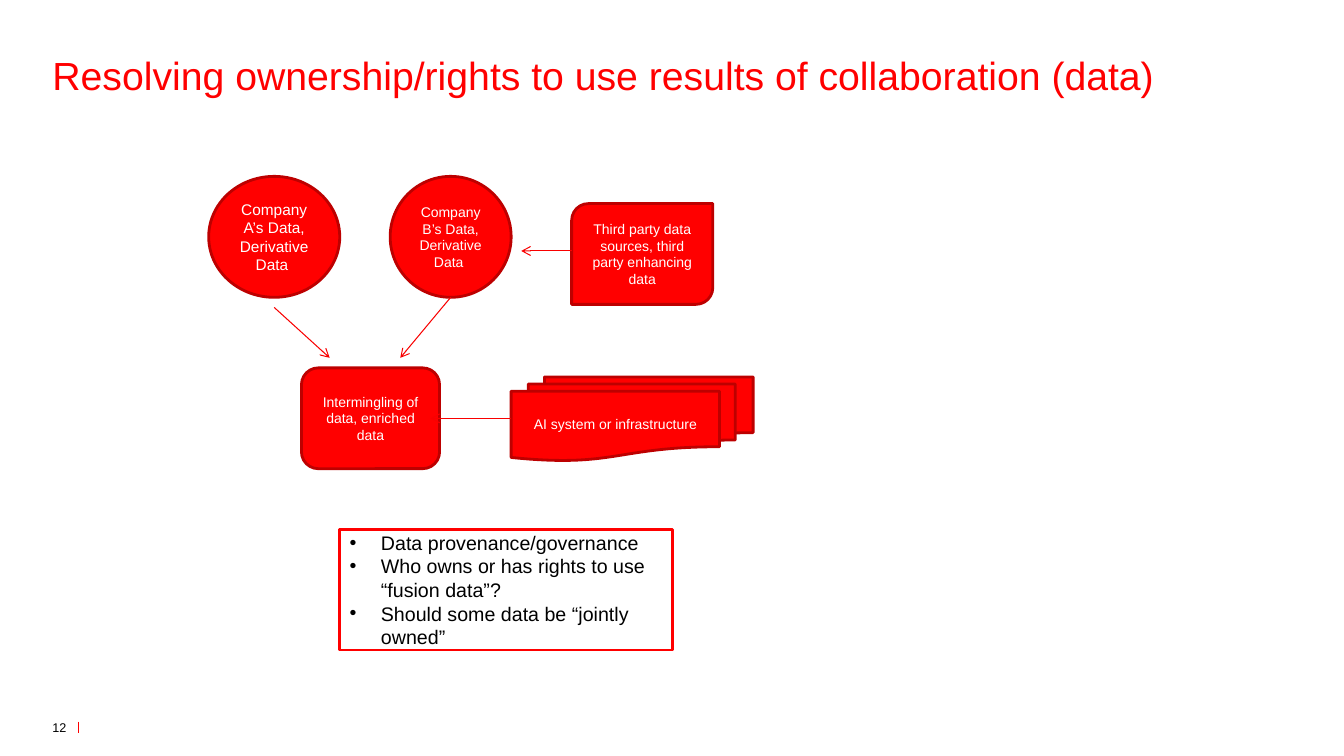
from lxml.etree import SubElement
from pptx import Presentation
from pptx.dml.color import RGBColor
from pptx.enum.shapes import MSO_CONNECTOR, MSO_SHAPE
from pptx.enum.text import MSO_ANCHOR, PP_ALIGN
from pptx.oxml.ns import qn
from pptx.util import Pt

PX = 9144
RED, DARK, ROSE, WHITE, BLACK = "FF0000", "BD0000", "F90000", "FFFFFF", "000000"
FLAT = dict(margin_left=0, margin_right=0, margin_top=0, margin_bottom=0)


def hue(code):
    """Turn a hex string into a colour."""
    return RGBColor.from_string(code)


def px(*nums):
    """Turn px lengths into EMU."""
    return [num * PX for num in nums]


def put(item, values):
    """Set each attribute named in a dict."""
    for name, value in values.items():
        setattr(item, name, value)


def write(shape, lines, size, color, align=PP_ALIGN.LEFT, bullet=None, **frame):
    """Fill a shape with paragraphs in one format."""
    text = shape.text_frame
    put(text, dict(word_wrap=True, vertical_anchor=MSO_ANCHOR.MIDDLE) | frame)
    text.text = "\n".join(lines)
    for para in text.paragraphs:
        para.alignment = align
        if bullet:
            props = para._p.get_or_add_pPr()
            put_xml = dict(marL=31 * PX, indent=-31 * PX)
            for name, value in put_xml.items():
                props.set(name, str(value))
            SubElement(props, qn("a:buFont"), typeface="Arial")
            SubElement(props, qn("a:buChar"), char=bullet)
        font = para.runs[0].font
        put(font, dict(name="Arial", size=Pt(size)))
        font.color.rgb = hue(color)


def block(slide, kind, box, fill, edge):
    """Draw a filled and outlined shape."""
    shape = slide.shapes.add_shape(kind, *px(*box))
    shape.shadow.inherit = False
    shape.fill.solid()
    shape.fill.fore_color.rgb = hue(fill)
    shape.line.color.rgb = hue(edge)
    shape.line.width = Pt(2)
    return shape


def link(slide, ends, color, width, head=True):
    """Draw a straight line, with an arrowhead if asked."""
    line = slide.shapes.add_connector(MSO_CONNECTOR.STRAIGHT, *px(*ends))
    line.line.color.rgb = hue(color)
    line.line.width = Pt(width)
    if head:
        SubElement(line.line._get_or_add_ln(), qn("a:tailEnd"), type="arrow")
    SubElement(line._element.spPr, qn("a:effectLst"))


def title(slide, box, words):
    """Place the heading."""
    write(slide.shapes.add_textbox(*px(*box)), [words], 28, RED, **FLAT)


def footer(slide, box, number):
    """Place the page number and the rule at its right."""
    left, top, width, _ = box
    link(slide, (left + width, top + 2, left + width, top + 13), RED, 0.5, False)
    write(slide.shapes.add_textbox(*px(*box)), [number], 9, BLACK,
          vertical_anchor=MSO_ANCHOR.TOP, **FLAT)


def flow(slide, box):
    """Place the data sources, the merged data and their arrows."""
    left, top, _, _ = box
    nodes = [
        (MSO_SHAPE.OVAL, (0, 0, 130, 120), 11, "Company A’s Data, Derivative Data "),
        (MSO_SHAPE.OVAL, (180, 0, 120, 120), 10, "Company B’s Data, Derivative Data "),
        (MSO_SHAPE.ROUNDED_RECTANGLE, (92, 190, 137, 100), 10,
         "Intermingling of data, enriched data"),
        (MSO_SHAPE.FLOWCHART_MULTIDOCUMENT, (300, 199, 240, 83), 10,
         "AI system or infrastructure"),
        (MSO_SHAPE.ROUND_2_DIAG_RECTANGLE, (360, 27, 140, 100), 10,
         "Third party data sources, third party enhancing data"),
    ]
    arrows = [(65, 130, 120, 180), (240, 120, 190, 180),
              (300, 240, 220, 240), (360, 74, 310, 74)]
    for kind, (x, y, wide, high), size, words in nodes:
        node = block(slide, kind, (left + x, top + y, wide, high), RED, DARK)
        write(node, [words], size, WHITE, PP_ALIGN.CENTER)
    for x1, y1, x2, y2 in arrows:
        link(slide, (left + x1, top + y1, left + x2, top + y2), ROSE, 0.75)


def issues(slide, box, lines):
    """Place the framed list of questions."""
    frame = block(slide, MSO_SHAPE.RECTANGLE, box, WHITE, RED)
    write(frame, lines, 14, BLACK, bullet="•")


def main():
    """Build and save the slide."""
    deck = Presentation()
    put(deck, dict(slide_width=1333 * PX, slide_height=750 * PX))
    slide = deck.slides.add_slide(deck.slide_layouts[6])
    title(slide, (52, 47, 1228, 55),
          "Resolving ownership/rights to use results of collaboration (data)")
    flow(slide, (207, 175, 540, 290))
    issues(slide, (337, 525, 330, 120), [
        "Data provenance/governance",
        "Who owns or has rights to use “fusion data”?",
        "Should some data be “jointly owned”",
    ])
    footer(slide, (52, 714, 26, 20), "12")
    deck.save("out.pptx")


if __name__ == "__main__":
    main()
